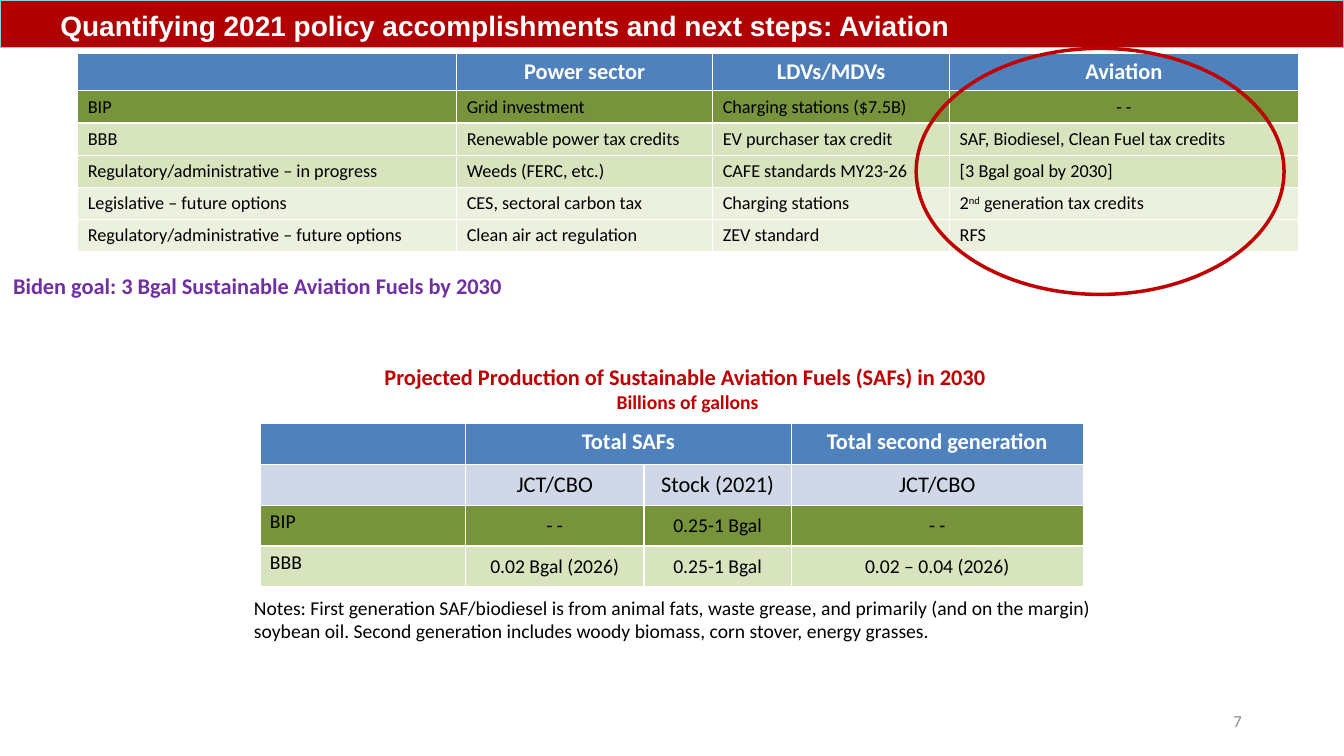
import pptx
import pptx.dml.color
import pptx.enum.shapes
import pptx.enum.text
import pptx.util

Cm = pptx.util.Cm
ALIGN = pptx.enum.text.PP_ALIGN
ANCHOR = pptx.enum.text.MSO_ANCHOR

COLORS = {
    "banner": "B00000", "banner edge": "93CDDD", "accent": "C00000",
    "goal": "7030A0", "number": "8C8C8C", "white": "FFFFFF", "black": "000000",
    "header": "4F81BD", "subheader": "D0D8E8",
    "enacted": "77933C", "pending": "D7E4BD", "future": "EBF1DE",
}

POLICY_ROWS = [
    ["", "Power sector", "LDVs/MDVs", "Aviation"],
    ["BIP", "Grid investment", "Charging stations ($7.5B)", "- -"],
    ["BBB", "Renewable power tax credits", "EV purchaser tax credit",
     "SAF, Biodiesel, Clean Fuel tax credits"],
    ["Regulatory/administrative – in progress", "Weeds (FERC, etc.)",
     "CAFE standards MY23-26", "[3 Bgal goal by 2030]"],
    ["Legislative – future options", "CES, sectoral carbon tax",
     "Charging stations", "2^nd^ generation tax credits"],
    ["Regulatory/administrative – future options", "Clean air act regulation",
     "ZEV standard", "RFS"],
]
POLICY_FILLS = ["header", "enacted", "pending", "pending", "future", "future"]

FUEL_ROWS = [
    ["", "Total SAFs", "", "Total second generation"],
    ["", "JCT/CBO", "Stock (2021)", "JCT/CBO"],
    ["BIP", "- -", "0.25-1 Bgal", "- -"],
    ["BBB", "0.02 Bgal (2026)", "0.25-1 Bgal", "0.02 – 0.04 (2026)"],
]
FUEL_FILLS = ["header", "subheader", "enacted", "pending"]


def rgb(name):
    return pptx.dml.color.RGBColor.from_string(COLORS[name])


class SlideBuilder:
    def __init__(self, deck, font="Calibri"):
        self.page = deck.slides.add_slide(deck.slide_layouts[5])
        self.font = font

    def fill_para(self, para, text, size, color, bold=False, align=ALIGN.LEFT, font=None):
        """Fill a paragraph; text between two carets is raised."""
        para.alignment = align
        if not text:
            # keeps an empty cell from growing to the default text size
            para._p.get_or_add_endParaRPr().set("sz", str(size * 100))
        for index, part in enumerate(text.split("^") if text else []):
            span = para.add_run()
            span.text = part
            style = {"name": font or self.font, "size": pptx.util.Pt(size), "bold": bold}
            for name, value in style.items():
                setattr(span.font, name, value)
            span.font.color.rgb = rgb(color)
            if index % 2:
                span._r.get_or_add_rPr().set("baseline", "30000")

    def title(self, text, height):
        banner = self.page.shapes.title
        place = {"left": 0, "top": 0, "width": Cm(33.87), "height": Cm(height)}
        for name, value in place.items():
            setattr(banner, name, value)
        banner.fill.solid()
        banner.fill.fore_color.rgb = rgb("banner")
        banner.line.color.rgb = rgb("banner edge")
        banner.line.width = 0
        layout = {"margin_left": Cm(1.52), "vertical_anchor": ANCHOR.BOTTOM,
                  "word_wrap": True, "auto_size": pptx.enum.text.MSO_AUTO_SIZE.NONE}
        for name, value in layout.items():
            setattr(banner.text_frame, name, value)
        self.fill_para(banner.text_frame.paragraphs[0], text, 20, "white", True, font="Arial")

    def text(self, place, lines, color, bold=False, align=ALIGN.LEFT, anchor=ANCHOR.TOP):
        """Add a text box; lines holds (text, size) pairs."""
        frame = self.page.shapes.add_textbox(*map(Cm, place)).text_frame
        frame.word_wrap = True
        frame.vertical_anchor = anchor
        for index, (line, size) in enumerate(lines):
            para = frame.add_paragraph() if index else frame.paragraphs[0]
            self.fill_para(para, line, size, color, bold, align)

    def ring(self, place):
        oval = pptx.enum.shapes.MSO_SHAPE.OVAL
        ring = self.page.shapes.add_shape(oval, *map(Cm, place))
        ring.shadow.inherit = False
        ring.fill.background()
        ring.line.color.rgb = rgb("accent")
        ring.line.width = pptx.util.Pt(2.5)

    def table(self, corner, widths, heights, rows, fills, sizes, centred):
        """Add a table; centred(row, column) tells which body cells are centred."""
        size = sum(widths), sum(heights)
        frame = self.page.shapes.add_table(len(rows), len(widths), *map(Cm, corner + size))
        table = frame.table
        table.horz_banding = False
        for column, width in zip(table.columns, widths):
            column.width = Cm(width)
        for r, (texts, fill) in enumerate(zip(rows, fills)):
            table.rows[r].height = Cm(heights[r])
            header = r == 0
            for c, text in enumerate(texts):
                cell = table.cell(r, c)
                cell.fill.solid()
                cell.fill.fore_color.rgb = rgb(fill)
                middle = header or centred(r, c)
                if middle and not header:
                    cell.vertical_anchor = ANCHOR.MIDDLE
                self.fill_para(cell.text_frame.paragraphs[0], text, sizes[r],
                               "white" if header else "black", header,
                               ALIGN.CENTER if middle else ALIGN.LEFT)
        return table


def main():
    deck = pptx.Presentation()
    deck.slide_width, deck.slide_height = Cm(33.87), Cm(19.05)
    slide = SlideBuilder(deck)
    slide.title("Quantifying 2021 policy accomplishments and next steps: Aviation", 1.19)
    slide.text((23.93, 17.65, 7.62, 1.02), [("7", 12)], "number",
               align=ALIGN.RIGHT, anchor=ANCHOR.MIDDLE)
    slide.table((1.96, 1.35), (9.55, 6.45, 5.97, 8.79), [0.94] + [0.81] * 5,
                POLICY_ROWS, POLICY_FILLS, [16] + [13] * 5,
                lambda row, column: (row, column) == (1, 3))
    slide.text((0.08, 6.73, 14.15, 0.94),
               [("Biden goal: 3 Bgal Sustainable Aviation Fuels by 2030", 16)], "goal", True)
    slide.ring((23.09, 1.22, 9.27, 6.2))
    fuels = slide.table((6.55, 10.67), (5.18, 4.5, 3.71, 7.36), [1.03] * 4,
                        FUEL_ROWS, FUEL_FILLS, [16, 16, 14, 14],
                        lambda row, column: column > 0)
    fuels.cell(0, 1).merge(fuels.cell(0, 2))
    slide.text((6.15, 14.88, 22.35, 1.45),
               [("Notes: First generation SAF/biodiesel is from animal fats, waste grease, "
                 "and primarily (and on the margin) soybean oil. Second generation includes "
                 "woody biomass, corn stover, energy grasses.", 14)], "black")
    slide.text((9.19, 9.02, 16.28, 1.55),
               [("Projected Production of Sustainable Aviation Fuels (SAFs) in 2030 ", 16),
                ("Billions of gallons", 14)], "accent", True, ALIGN.CENTER)
    deck.save("out.pptx")


if __name__ == "__main__":
    main()
